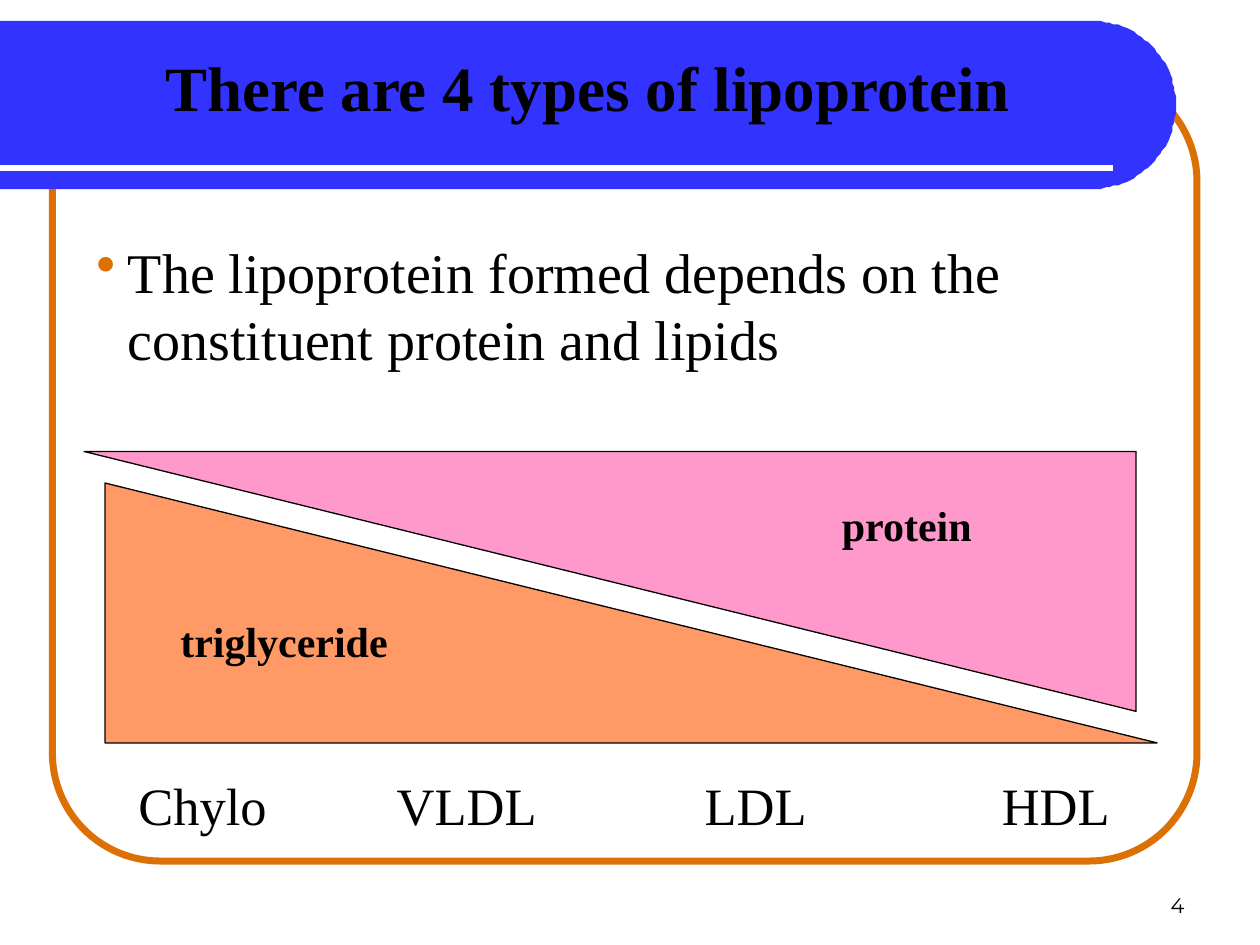
"""Build a slide showing how protein and triglyceride vary over the four lipoproteins."""
import math

from lxml import etree
from pptx import Presentation
from pptx.dml.color import RGBColor
from pptx.enum import shapes, text
from pptx.oxml import ns
from pptx.util import Pt

BLACK = RGBColor(0x00, 0x00, 0x00)
WHITE = RGBColor(0xFF, 0xFF, 0xFF)
BLUE = RGBColor(0x33, 0x33, 0xFF)
AMBER = RGBColor(0xDC, 0x70, 0x04)
ORANGE = RGBColor(0xFF, 0x99, 0x66)
PINK = RGBColor(0xFF, 0x99, 0xCC)

TITLE = "There are 4 types of lipoprotein"
STATEMENT = "The lipoprotein formed depends on the constituent protein and lipids"
TYPES = [("Chylo", 0), ("VLDL", 147.6), ("LDL", 323.6), ("HDL", 493.4)]
WEDGES = [(60, 276, ORANGE, 0), (48, 258, PINK, 180)]
LABELS = [("triglyceride", (96, 348, 185, 36)), ("protein", (474, 282, 108, 36))]
BAND_TOP, BAND_RIGHT, BAND_RADIUS = 12, 672, 48


def add_child(parent, tag, **attributes):
    return etree.SubElement(parent, ns.qn(tag), attributes)


def write(box, content, size, bold=False, font="Times New Roman",
          align=text.PP_ALIGN.LEFT, anchor=text.MSO_ANCHOR.TOP):
    frame = box.text_frame
    frame.word_wrap = True
    frame.auto_size = text.MSO_AUTO_SIZE.NONE
    frame.vertical_anchor = anchor
    para = frame.paragraphs[0]
    para.alignment = align
    span = para.add_run()
    span.text = content
    span.font.name = font
    span.font.size = Pt(size)
    span.font.bold = bold
    span.font.color.rgb = BLACK
    return para


def place(box, left, top, width, height):
    box.left, box.top, box.width, box.height = map(Pt, (left, top, width, height))


def add_text(page, bounds, content, size, **style):
    box = page.shapes.add_textbox(*map(Pt, bounds))
    return write(box, content, size, **style)


def add_frame(page):
    frame = page.shapes.add_shape(
        shapes.MSO_SHAPE.ROUNDED_RECTANGLE, Pt(30), Pt(42), Pt(654), Pt(450))
    frame.adjustments[0] = 0.137
    frame.shadow.inherit = False
    frame.fill.background()
    frame.line.color.rgb = AMBER
    frame.line.width = Pt(4)


def add_band(page):
    centre_x, centre_y = BAND_RIGHT - BAND_RADIUS, BAND_TOP + BAND_RADIUS
    arc = [(centre_x + BAND_RADIUS * math.cos(math.radians(angle)),
            centre_y + BAND_RADIUS * math.sin(math.radians(angle)))
           for angle in range(-90, 91, 3)]
    outline = page.shapes.build_freeform(0, BAND_TOP, scale=Pt(1))
    outline.add_line_segments(arc + [(0, BAND_TOP + 2 * BAND_RADIUS)], close=True)
    band = outline.convert_to_shape()
    band.shadow.inherit = False
    band.fill.solid()
    band.fill.fore_color.rgb = BLUE
    band.line.fill.background()

    rule = page.shapes.add_connector(
        shapes.MSO_CONNECTOR.STRAIGHT, Pt(0), Pt(96), Pt(636), Pt(96))
    rule.line.color.rgb = WHITE
    rule.line.width = Pt(3)
    add_child(rule.element.spPr, "a:effectLst")


def add_wedge(page, left, top, color, rotation):
    wedge = page.shapes.add_shape(
        shapes.MSO_SHAPE.RIGHT_TRIANGLE, Pt(left), Pt(top), Pt(601.2), Pt(148.5))
    wedge.rotation = rotation
    wedge.shadow.inherit = False
    wedge.fill.solid()
    wedge.fill.fore_color.rgb = color
    wedge.line.color.rgb = BLACK
    wedge.line.width = Pt(0.75)


def add_bullet(para):
    properties = para._p.get_or_add_pPr()
    properties.set("marL", str(Pt(18)))
    properties.set("indent", str(Pt(-18)))
    add_child(add_child(properties, "a:buClr"), "a:srgbClr", val=str(AMBER))
    add_child(properties, "a:buChar", char="•")


def add_tabs(para, positions):
    tabs = add_child(para._p.get_or_add_pPr(), "a:tabLst")
    for position in positions:
        add_child(tabs, "a:tab", pos=str(Pt(position)), algn="l")


def main():
    deck = Presentation()
    deck.slide_width, deck.slide_height = Pt(720), Pt(540)
    page = deck.slides.add_slide(deck.slide_layouts[5])

    add_frame(page)
    add_band(page)
    add_text(page, (516, 492, 168, 36), "4", 12, font="Montserrat",
             align=text.PP_ALIGN.RIGHT, anchor=text.MSO_ANCHOR.BOTTOM)
    add_bullet(add_text(page, (48, 132, 672, 84), STATEMENT, 32))

    title = page.shapes.title
    place(title, 54, 24, 564, 50.4)
    write(title, TITLE, 36, bold=True, align=text.PP_ALIGN.CENTER)
    page.shapes.element.append(title.element)

    for wedge in WEDGES:
        add_wedge(page, *wedge)
    for label, bounds in LABELS:
        add_text(page, bounds, label, 24, bold=True)

    names, positions = zip(*TYPES)
    add_tabs(add_text(page, (72, 438, 594, 43.2), "\t".join(names), 30), positions[1:])
    deck.save("out.pptx")


if __name__ == "__main__":
    main()
